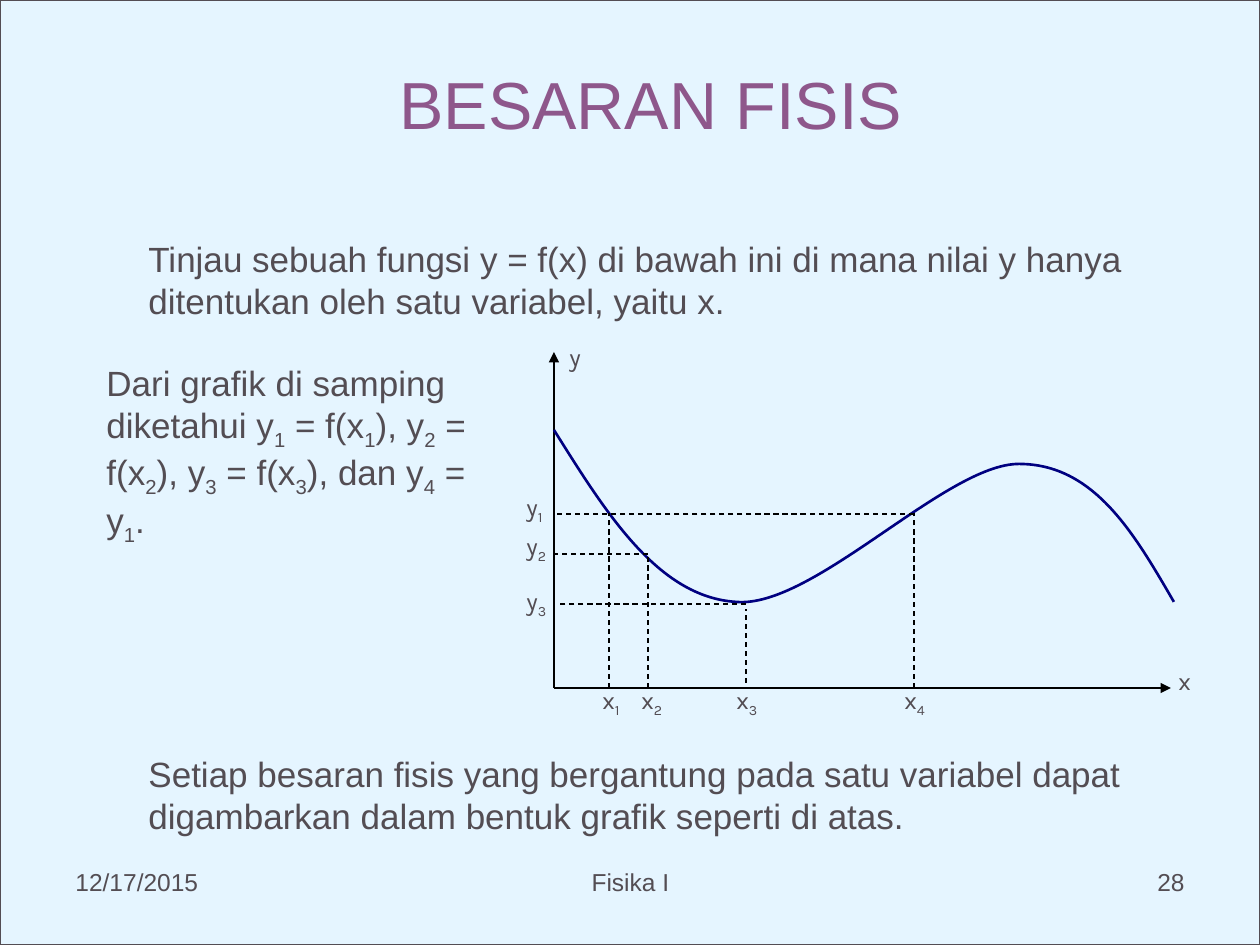
from lxml import etree
from pptx import Presentation
from pptx.dml.color import RGBColor
from pptx.enum.dml import MSO_LINE
from pptx.enum.shapes import MSO_CONNECTOR, MSO_SHAPE
from pptx.enum.text import MSO_ANCHOR, PP_ALIGN
from pptx.oxml.ns import qn
from pptx.util import Pt

DASH = MSO_LINE.DASH
STRAIGHT = MSO_CONNECTOR.STRAIGHT
RECTANGLE = MSO_SHAPE.RECTANGLE
MIDDLE = MSO_ANCHOR.MIDDLE
LEFT, CENTER, RIGHT = PP_ALIGN.LEFT, PP_ALIGN.CENTER, PP_ALIGN.RIGHT

PX = 914400 / 126  # EMU in one px
WIDTH, HEIGHT = 1260, 945
COLORS = {"paper": "E5F5FF", "text": "534D53", "title": "8E578B",
          "axis": "000000", "curve": "000080"}
BODY_FONT, LABEL_FONT = "Arial", "Karla"

# Content: an underscore lowers the character after it
TITLE = ("BESARAN FISIS", (357, 38, 588, 130))
PASSAGES = [
    ("Tinjau sebuah fungsi y = f(x) di bawah ini di mana nilai y hanya "
     "ditentukan oleh satu variabel, yaitu x.", (136, 231, 1056, 97)),
    ("Dari grafik di samping diketahui y_1 = f(x_1), y_2 = f(x_2), "
     "y_3 = f(x_3), dan y_4 = y_1.", (94, 355, 410, 180)),
    ("Setiap besaran fisis yang bergantung pada satu variabel dapat "
     "digambarkan dalam bentuk grafik seperti di atas.", (136, 746, 1050, 97)),
]
FOOTERS = [
    ("12/17/2015", LEFT, 63, 294),
    ("Fisika I", CENTER, 431, 399),
    ("28", RIGHT, 903, 294),
]
FOOTER_TOP, FOOTER_HEIGHT = 861, 65

# Graph
ORIGIN_X, ORIGIN_Y = 554, 688
Y_AXIS_TOP, X_AXIS_END = 352, 1171
AXIS_NAMES = [("y", (557, 336, 35, 58)), ("x", (1166, 660, 40, 42))]
CURVE = [(554, 430), (606, 513), (658, 597), (736, 602), (813, 609),
         (946, 464), (1019, 464), (1094, 464), (1134, 533), (1174, 602)]
# label, label left, guide x, guide bottom, guide top
X_MARKS = [("x_1", 590, 609, 688, 513), ("x_2", 629, 648, 688, 557),
           ("x_3", 724, 746, 683, 609), ("x_4", 892, 914, 688, 513)]
# label, label top, guide y, guide right, guide left
Y_MARKS = [("y_1", 486, 514, 914, 557), ("y_2", 525, 554, 648, 553),
           ("y_3", 580, 604, 746, 557)]
X_LABEL_TOP, Y_LABEL_LEFT = 679, 514
LABEL_WIDTH, LABEL_HEIGHT = 63, 45


def emu(*lengths):
    return [round(length * PX) for length in lengths]


def color(name):
    return RGBColor.from_string(COLORS[name])


def write(frame, text, size, font=BODY_FONT, ink="text", align=LEFT):
    frame.word_wrap = True
    paragraph = frame.paragraphs[0]
    paragraph.alignment = align
    paragraph.font.size = Pt(size)
    paragraph.font.name = font
    paragraph.font.color.rgb = color(ink)
    first, *rest = text.split("_")
    pieces = [(first, False)]
    for part in rest:
        pieces += [(part[0], True), (part[1:], False)]
    for piece, lowered in pieces:
        if piece:
            run = paragraph.add_run()
            run.text = piece
            if lowered:
                run.font._element.set("baseline", "-25000")


def add_text(box, text, size, **style):
    write(shapes.add_textbox(*emu(*box)).text_frame, text, size, **style)


def add_label(box, text):
    add_text(box, text, 14, font=LABEL_FONT)


def add_line(x1, y1, x2, y2, arrow=False):
    connector = shapes.add_connector(STRAIGHT, *emu(x1, y1, x2, y2))
    connector.line.color.rgb = color("axis")
    connector.line.width = Pt(0.75)
    if arrow:
        etree.SubElement(connector.line._get_or_add_ln(), qn("a:tailEnd"), type="triangle")
    else:
        connector.line.dash_style = DASH
    etree.SubElement(connector._element.spPr, qn("a:effectLst"))


def add_curve(points):
    builder = shapes.build_freeform(*points[0], scale=PX)
    builder.add_line_segments(points[1:], close=False)
    curve = builder.convert_to_shape()
    curve.shadow.inherit = False
    curve.fill.background()
    curve.line.color.rgb = color("curve")
    curve.line.width = Pt(1.5)
    # Every three points become one Bezier segment
    outline = next(curve._element.iter(qn("a:path")))
    steps = outline.findall(qn("a:lnTo"))
    for start in range(0, len(steps), 3):
        segment = etree.SubElement(outline, qn("a:cubicBezTo"))
        for step in steps[start:start + 3]:
            segment.append(step[0])
            outline.remove(step)


prs = Presentation()
prs.slide_width, prs.slide_height = emu(WIDTH, HEIGHT)
slide = prs.slides.add_slide(prs.slide_layouts[5])
shapes = slide.shapes

# Framed background, behind the title
paper = shapes.add_shape(RECTANGLE, *emu(0, 0, WIDTH, HEIGHT))
paper.shadow.inherit = False
paper.fill.solid()
paper.fill.fore_color.rgb = color("paper")
paper.line.color.rgb = color("text")
paper.line.width = Pt(0.75)
shapes._spTree.insert(2, paper._element)

# Title, passages and footer
title = shapes.title
title.left, title.top, title.width, title.height = emu(*TITLE[1])
title.text_frame.vertical_anchor = MIDDLE
write(title.text_frame, TITLE[0], 38, ink="title", align=CENTER)
for passage, box in PASSAGES:
    add_text(box, passage, 20)
for footer, align, left, width in FOOTERS:
    add_text((left, FOOTER_TOP, width, FOOTER_HEIGHT), footer, 14, align=align)

# Axes and curve
add_line(ORIGIN_X, ORIGIN_Y, ORIGIN_X, Y_AXIS_TOP, arrow=True)
add_line(ORIGIN_X, ORIGIN_Y, X_AXIS_END, ORIGIN_Y, arrow=True)
for name, box in AXIS_NAMES:
    add_label(box, name)
add_curve(CURVE)

# Guides and their labels
for label, left, x, bottom, top in X_MARKS:
    add_line(x, bottom, x, top)
    add_label((left, X_LABEL_TOP, LABEL_WIDTH, LABEL_HEIGHT), label)
for label, top, y, right, left in Y_MARKS:
    add_line(right, y, left, y)
    add_label((Y_LABEL_LEFT, top, LABEL_WIDTH, LABEL_HEIGHT), label)

prs.save("out.pptx")
